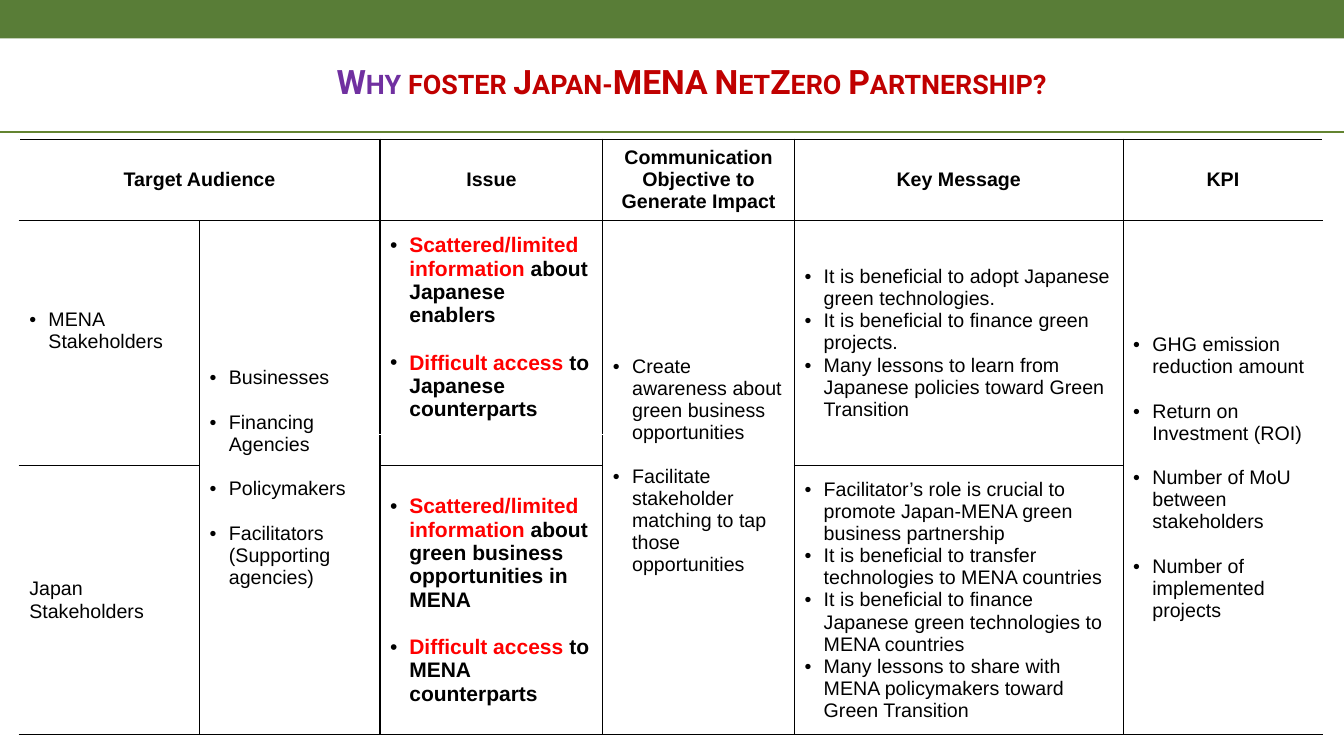
import pptx
import pptx.util
import pptx.dml.color
import pptx.enum.shapes
import pptx.enum.text
import pptx.oxml
import pptx.oxml.ns
from lxml import etree

Inches, Pt = pptx.util.Inches, pptx.util.Pt
RGB = pptx.dml.color.RGBColor
ALIGN, ANCHOR = pptx.enum.text.PP_ALIGN, pptx.enum.text.MSO_ANCHOR
qn = pptx.oxml.ns.qn

BLACK = RGB(0x00, 0x00, 0x00)
WHITE = RGB(0xFF, 0xFF, 0xFF)
RED = RGB(0xFF, 0x00, 0x00)
CRIMSON = RGB(0xC0, 0x00, 0x00)
PURPLE = RGB(0x70, 0x30, 0xA0)
GREEN = RGB(0x59, 0x7D, 0x37)
RULE = RGB(0x63, 0x84, 0x30)


def add_run(para, text, size, color, bold=False, face="Arial"):
    run = para.add_run()
    run.text = text
    run.font.name = face
    run.font.size = Pt(size)
    run.font.bold = bold
    run.font.color.rgb = color
    return run


def add_edge(cell, side):
    edge = etree.SubElement(cell._tc.get_or_add_tcPr(), qn("a:ln" + side), w="12700")
    fill = etree.SubElement(edge, qn("a:solidFill"))
    etree.SubElement(fill, qn("a:srgbClr"), val=str(BLACK))


deck = pptx.Presentation()
deck.slide_width, deck.slide_height = Inches(13.33), Inches(7.5)
slide = deck.slides.add_slide(deck.slide_layouts[5])

# Top band and rule
band = slide.shapes.add_shape(pptx.enum.shapes.MSO_SHAPE.RECTANGLE,
                              0, 0, Inches(13.33), Inches(0.38))
band.shadow.inherit = False
band.fill.solid()
band.fill.fore_color.rgb = GREEN
band.line.fill.background()
rule = slide.shapes.add_connector(pptx.enum.shapes.MSO_CONNECTOR.STRAIGHT,
                                  0, Inches(1.31), Inches(13.33), Inches(1.31))
rule.line.color.rgb = RULE
rule.line.width = Pt(1.5)
etree.SubElement(rule._element.spPr, qn("a:effectLst"))

# Title
title = slide.shapes.title
title.left, title.top = Inches(0.6), Inches(0.55)
title.width, title.height = Inches(12.52), Inches(0.5)
frame = title.text_frame
frame.word_wrap = True
frame.auto_size = pptx.enum.text.MSO_AUTO_SIZE.NONE
frame.vertical_anchor = ANCHOR.MIDDLE
para = frame.paragraphs[0]
para.alignment = ALIGN.CENTER
for text, color in [("Why ", PURPLE),
                    ("foster Japan-MENA NetZero Partnership?", CRIMSON)]:
    run = add_run(para, text, 24, color, True, "Roboto")
    run.font._element.set("cap", "small")

# Table grid
widths = [1.79, 1.79, 2.21, 1.9, 3.26, 1.98]
heights = [0.81, 2.12, 0.31, 2.67]
table = slide.shapes.add_table(4, 6, Inches(0.19), Inches(1.38),
                               Inches(12.93), Inches(5.91)).table
table.first_row = table.horz_banding = False
for col, width in zip(table.columns, widths):
    col.width = Inches(width)
for row, height in zip(table.rows, heights):
    row.height = Inches(height)
table.cell(0, 0).merge(table.cell(0, 1))
for col, last in [(0, 2), (1, 3), (3, 3), (4, 2), (5, 3)]:
    table.cell(1, col).merge(table.cell(last, col))

# Cell edges and fills; the issue column has no line between rows 1 and 2
for row in range(4):
    for col in range(6):
        cell = table.cell(row, col)
        whole = not cell.is_spanned
        sides = {"L": col > 0, "R": col < 5,
                 "T": whole and (row, col) != (2, 2),
                 "B": row == 3 or whole and (row, col) != (1, 2)}
        if row == 0 and col < 2:
            sides["L"], sides["R"] = False, True
        for side, shown in sides.items():
            if shown:
                add_edge(cell, side)
        cell.fill.solid()
        cell.fill.fore_color.rgb = WHITE
        cell.vertical_anchor = ANCHOR.MIDDLE
        if row == 2:
            # Small type keeps the thin row at its height
            para = cell.text_frame.paragraphs[0]
            etree.SubElement(para._p, qn("a:endParaRPr"), sz="1000")

# Header row
heads = {0: "Target Audience", 2: "Issue",
         3: "Communication Objective to Generate Impact",
         4: "Key Message", 5: "KPI"}
for col, text in heads.items():
    para = table.cell(0, col).text_frame.paragraphs[0]
    para.alignment = ALIGN.CENTER
    add_run(para, text, 14, BLACK, True)

# Body cells: row, column, gap between items, items
body = [
    (1, 0, 0, ["MENA Stakeholders"]),
    (3, 0, 0, ["Japan Stakeholders"]),
    (1, 1, 16, ["Businesses", "Financing Agencies", "Policymakers",
                "Facilitators (Supporting agencies)"]),
    (1, 2, 17, [("Scattered/limited information ", "about Japanese enablers"),
                ("Difficult access ", "to Japanese counterparts")]),
    (3, 2, 17, [("Scattered/limited information ",
                 "about green business opportunities in MENA"),
                ("Difficult access ", "to MENA counterparts")]),
    (1, 3, 16, ["Create awareness about green business opportunities",
                "Facilitate stakeholder matching to tap those opportunities"]),
    (1, 4, 0, ["It is beneficial to adopt Japanese green technologies.",
               "It is beneficial to finance green projects.",
               "Many lessons to learn from Japanese policies toward Green Transition"]),
    (3, 4, 0, ["Facilitator’s role is crucial to promote Japan-MENA green business partnership",
               "It is beneficial to transfer technologies to MENA countries",
               "It is beneficial to finance Japanese green technologies to MENA countries",
               "Many lessons to share with MENA policymakers toward Green Transition"]),
    (1, 5, 16, ["GHG emission reduction amount", "Return on Investment (ROI)",
                "Number of MoU between stakeholders",
                "Number of implemented projects"]),
]
for row, col, gap, items in body:
    frame = table.cell(row, col).text_frame
    for num, item in enumerate(items):
        para = frame.add_paragraph() if num else frame.paragraphs[0]
        if num and gap:
            para.space_before = Pt(gap)
        if (row, col) != (3, 0):
            props = para._p.get_or_add_pPr()
            props.set("marL", str(Inches(0.19)))
            props.set("indent", str(-Inches(0.19)))
            tint = etree.SubElement(props, qn("a:buClr"))
            etree.SubElement(tint, qn("a:srgbClr"), val=str(BLACK))
            etree.SubElement(props, qn("a:buFont"), typeface="Arial")
            etree.SubElement(props, qn("a:buChar"), char="•")
        if col == 2:
            add_run(para, item[0], 15, RED, True)
            add_run(para, item[1], 15, BLACK, True)
        else:
            add_run(para, item, 14, BLACK)

# These two cells sit a little above the middle
for col in (0, 3):
    table.cell(1, col).margin_bottom = Inches(0.29)

deck.save("out.pptx")
